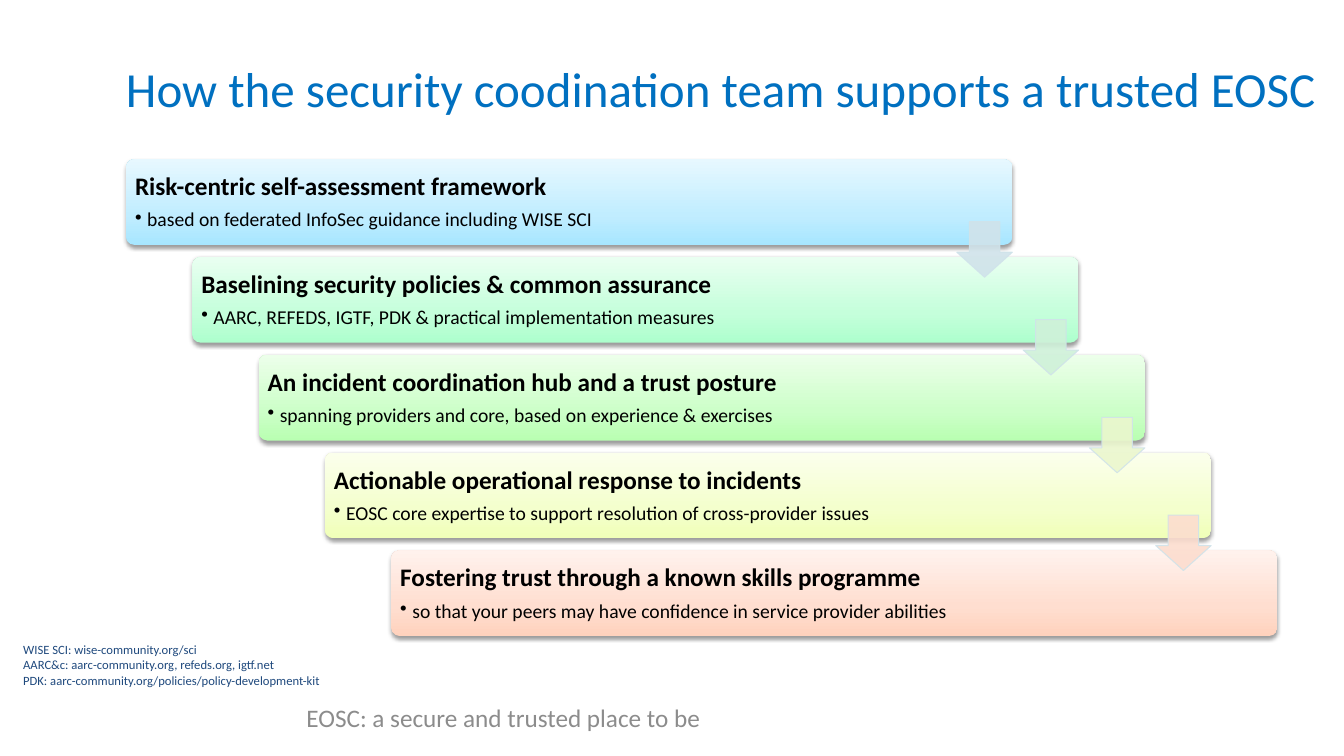
from lxml import etree
from pptx import Presentation
from pptx.dml.color import RGBColor
from pptx.enum import shapes, text
from pptx.oxml import ns
from pptx.util import Inches, Pt

TITLE_BLUE = RGBColor(0x00, 0x70, 0xC0)
FOOTER_GREY = RGBColor(0x8C, 0x8C, 0x8C)
REFERENCE_NAVY = RGBColor(0x1F, 0x49, 0x7D)
BLACK = RGBColor(0x00, 0x00, 0x00)
ARROW_EDGE = RGBColor(0xD0, 0xE3, 0xEA)


def palette(*codes):
    return [RGBColor.from_string(code) for code in codes]


STEPS = [
    ("Risk-centric self-assessment framework",
     "based on federated InfoSec guidance including WISE SCI",
     palette("A7E6FF", "C1EDFF", "E7F8FF")),
    ("Baselining security policies & common assurance",
     "AARC, REFEDS, IGTF, PDK & practical implementation measures",
     palette("ADFFCD", "C5FFDB", "E9FFF1")),
    ("An incident coordination hub and a trust posture",
     "spanning providers and core, based on experience & exercises",
     palette("B9FFB2", "CDFFC9", "ECFFEA")),
    ("Actionable operational response to incidents",
     "EOSC core expertise to support resolution of cross-provider issues",
     palette("F0FFB8", "F4FFCD", "FBFFEC")),
    ("Fostering trust through a known skills programme",
     "so that your peers may have confidence in service provider abilities",
     palette("FFD2BD", "FFDED0", "FFF2ED")),
]
ARROW_FILLS = palette("D0E3EA", "CFF1D9", "EBF7CE", "FCDDCF")
REFERENCES = "\v".join([
    "WISE SCI: wise-community.org/sci",
    "AARC&c: aarc-community.org, refeds.org, igtf.net",
    "PDK: aarc-community.org/policies/policy-development-kit",
])

LEFT, TOP = 1.25, 1.58
SHIFT, PITCH = 2.63 / 4, 0.97
STEP_WIDTH, STEP_HEIGHT = 8.79, 0.85
ARROW_SIZE = 0.55


def child(parent, tag, **attributes):
    element = etree.SubElement(parent, ns.qn(tag))
    for name, value in attributes.items():
        element.set(name, str(value))
    return element


def add_color(parent, color, alpha=100):
    node = child(parent, "a:srgbClr", val=color)
    if alpha < 100:
        child(node, "a:alpha", val=alpha * 1000)


def add_frame(slide, left, top, width, height, inset=0.0, middle=False):
    box = slide.shapes.add_textbox(*map(Inches, (left, top, width, height)))
    frame = box.text_frame
    frame.word_wrap = True
    frame.margin_left = frame.margin_right = Inches(inset)
    frame.margin_top = frame.margin_bottom = Inches(inset)
    if middle:
        frame.vertical_anchor = text.MSO_ANCHOR.MIDDLE
    return frame


def write(frame, wording, size, color, bold=False, bullet=False,
          line_spacing=None, space_after=None):
    paragraph = frame.paragraphs[0]
    if paragraph.runs:
        paragraph = frame.add_paragraph()
    paragraph.text = wording
    if line_spacing:
        paragraph.line_spacing = line_spacing
    if space_after:
        paragraph.space_after = Pt(space_after)
    if bullet:
        properties = paragraph._p.get_or_add_pPr()
        properties.set("marL", str(Inches(0.12)))
        properties.set("indent", str(Inches(-0.12)))
        child(properties, "a:buChar", char="•")
    for run in paragraph.runs:
        run.font.name = "Calibri"
        run.font.size = Pt(size)
        run.font.bold = bold
        run.font.color.rgb = color


def add_step(slide, left, top, heading, detail, shades):
    panel = slide.shapes.add_shape(
        shapes.MSO_SHAPE.ROUNDED_RECTANGLE,
        *map(Inches, (left, top, STEP_WIDTH, STEP_HEIGHT)))
    panel.adjustments[0] = 0.1
    panel.line.fill.background()
    panel.shadow.inherit = False

    properties = panel._element.spPr
    gradient = etree.Element(ns.qn("a:gradFill"), rotWithShape="1")
    stops = child(gradient, "a:gsLst")
    for position, shade in zip((0, 35, 100), shades):
        add_color(child(stops, "a:gs", pos=position * 1000), shade)
    child(gradient, "a:lin", ang=270 * 60000, scaled=0)
    properties.find(ns.qn("a:prstGeom")).addnext(gradient)

    shadow = child(properties.find(ns.qn("a:effectLst")), "a:outerShdw",
                   blurRad=Pt(3.1), dist=Pt(1.6), dir=90 * 60000, rotWithShape=0)
    add_color(shadow, BLACK, alpha=38)

    frame = add_frame(slide, left + 0.02, top + 0.03, 7.53, 0.8,
                      inset=0.07, middle=True)
    write(frame, heading, 18, BLACK, bold=True, line_spacing=0.9, space_after=6.3)
    write(frame, detail, 14, BLACK, bullet=True, line_spacing=0.9, space_after=2.1)


def add_arrow(slide, left, top, color):
    arrow = slide.shapes.add_shape(
        shapes.MSO_SHAPE.DOWN_ARROW,
        *map(Inches, (left, top, ARROW_SIZE, ARROW_SIZE)))
    arrow.adjustments[0], arrow.adjustments[1] = 0.55, 0.45
    arrow.shadow.inherit = False
    arrow.fill.solid()
    arrow.fill.fore_color.rgb = color
    arrow.line.color.rgb = ARROW_EDGE
    arrow.line.width = Pt(0.75)
    for shade in arrow._element.spPr.iter(ns.qn("a:srgbClr")):
        child(shade, "a:alpha", val=90000)


def main():
    deck = Presentation()
    deck.slide_width, deck.slide_height = Inches(13.33), Inches(7.5)
    slide = deck.slides.add_slide(deck.slide_layouts[6])

    write(add_frame(slide, LEFT, 0.58, 11.83, 1.18),
          "How the security coodination team supports a trusted EOSC",
          35, TITLE_BLUE)
    write(add_frame(slide, 3.04, 6.97, 7.5, 0.38),
          "EOSC: a secure and trusted place to be", 18, FOOTER_GREY)

    for index, step in enumerate(STEPS):
        add_step(slide, LEFT + index * SHIFT, TOP + index * PITCH, *step)
    for index, color in enumerate(ARROW_FILLS):
        add_arrow(slide, LEFT + index * SHIFT + STEP_WIDTH - ARROW_SIZE,
                  TOP + index * PITCH + 0.62, color)

    write(add_frame(slide, 0.17, 6.31, 3.61, 0.57, inset=0.06, middle=True),
          REFERENCES, 9, REFERENCE_NAVY)
    deck.save("out.pptx")


if __name__ == "__main__":
    main()
